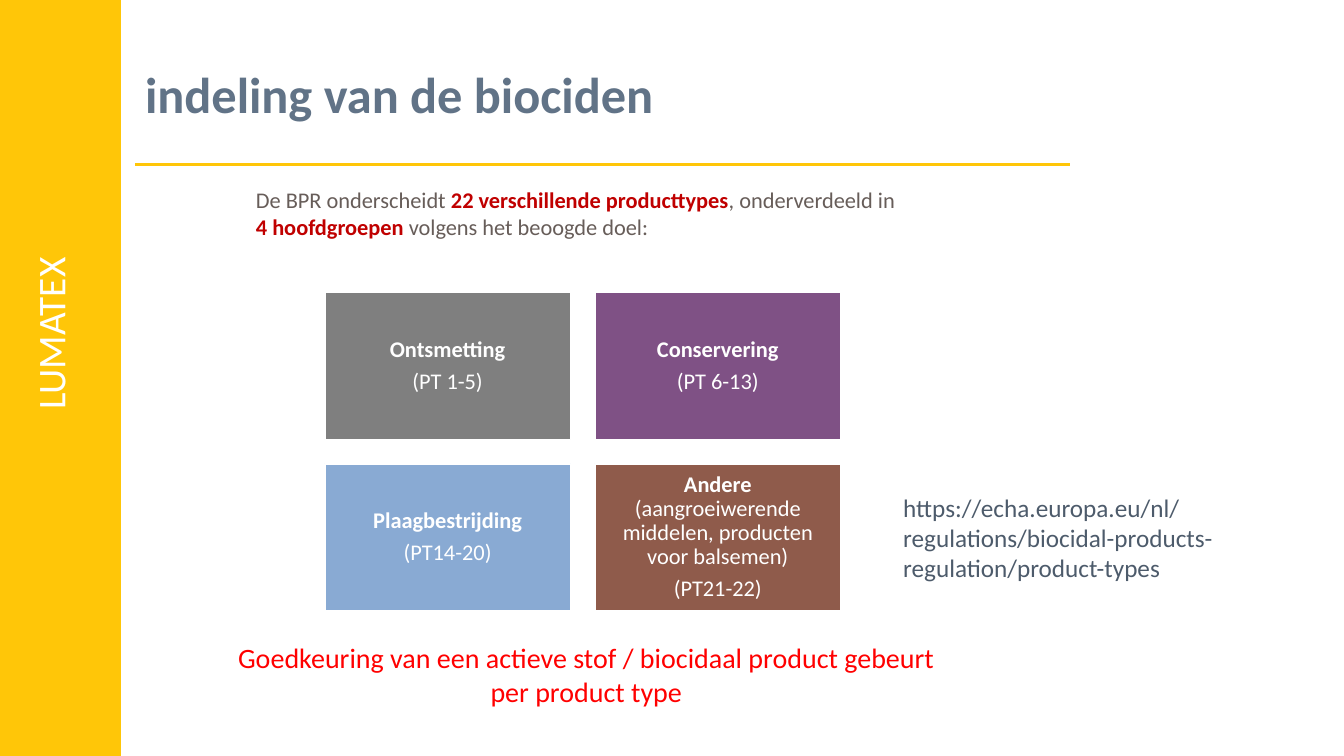
from dataclasses import dataclass

from lxml.etree import SubElement
from pptx import Presentation
from pptx.dml.color import RGBColor
from pptx.enum.shapes import MSO_CONNECTOR, MSO_SHAPE
from pptx.enum.text import MSO_ANCHOR, PP_ALIGN
from pptx.oxml.ns import qn
from pptx.util import Inches, Pt


@dataclass(frozen=True)
class Theme:
    font: str = "Calibri"
    accent: str = "FFC608"
    white: str = "FFFFFF"
    title: str = "617387"
    body: str = "675D59"
    emphasis: str = "C00000"
    conclusion: str = "FF0000"
    source: str = "4D5B6B"
    groups: tuple = ("7F7F7F", "7F5185", "89AAD3", "8F5B4B")
    title_size: int = 36
    band_size: int = 28
    conclusion_size: int = 20
    source_size: int = 18
    body_size: int = 16


THEME = Theme()

PRODUCT_GROUPS = [
    ("Ontsmetting", "", "(PT 1-5)"),
    ("Conservering", "", "(PT 6-13)"),
    ("Plaagbestrijding", "", "(PT14-20)"),
    ("Andere", " (aangroeiwerende middelen, producten voor balsemen)", "(PT21-22)"),
]


def color(value):
    return RGBColor.from_string(value)


def add_runs(paragraph, parts, size):
    for wording, ink, bold in parts:
        run = paragraph.add_run()
        run.text = wording
        run.font.name = THEME.font
        run.font.size = Pt(size)
        run.font.bold = bold
        run.font.color.rgb = color(ink)


def add_text(slide, box, parts, size, align=PP_ALIGN.LEFT, anchor=MSO_ANCHOR.TOP):
    frame = slide.shapes.add_textbox(*map(Inches, box)).text_frame
    frame.word_wrap = True
    frame.vertical_anchor = anchor
    frame.paragraphs[0].alignment = align
    add_runs(frame.paragraphs[0], parts, size)
    return frame


def add_rectangle(slide, box, fill):
    rectangle = slide.shapes.add_shape(MSO_SHAPE.RECTANGLE, *map(Inches, box))
    rectangle.shadow.inherit = False
    rectangle.fill.solid()
    rectangle.fill.fore_color.rgb = color(fill)
    return rectangle


def add_side_band(slide, box):
    left, top, width, height = box
    add_rectangle(slide, box, THEME.accent).line.fill.background()
    name_box = (left + 0.22, top + 2.2, 0.67, 2.22)
    name = add_text(slide, name_box, [("LUMATEX", THEME.white, False)],
                    THEME.band_size, PP_ALIGN.CENTER)
    name._txBody.bodyPr.set("vert", "vert270")


def add_header(slide, box):
    left, top, width, height = box
    add_text(slide, (left, top, width, 1.25),
             [("indeling van de biociden", THEME.title, True)],
             THEME.title_size, anchor=MSO_ANCHOR.MIDDLE)
    bottom = top + height
    rule = slide.shapes.add_connector(
        MSO_CONNECTOR.STRAIGHT,
        *map(Inches, (left, bottom, left + width, bottom)))
    rule.line.color.rgb = color(THEME.accent)
    rule.line.width = Pt(2.25)
    SubElement(rule._element.spPr, qn("a:effectLst"))


def add_product_group(slide, box, group, fill):
    name, detail, product_types = group
    tile = add_rectangle(slide, box, fill)
    tile.line.color.rgb = color(THEME.white)
    tile.line.width = Pt(1.25)
    frame = tile.text_frame
    frame.word_wrap = True
    frame.vertical_anchor = MSO_ANCHOR.MIDDLE
    frame.margin_left = frame.margin_right = Inches(0.07)
    frame.margin_top = frame.margin_bottom = Inches(0.07)
    heading = [(name, THEME.white, True)]
    if detail:
        heading.append((detail, THEME.white, False))
    add_runs(frame.paragraphs[0], heading, THEME.body_size)
    add_runs(frame.add_paragraph(), [(product_types, THEME.white, False)], THEME.body_size)
    for paragraph in frame.paragraphs:
        paragraph.alignment = PP_ALIGN.CENTER
        paragraph.line_spacing = 0.9
        paragraph.space_after = Pt(5.6)


def add_group_grid(slide, box):
    left, top, width, height = box
    tile_width, tile_height = 2.44, 1.46
    for index, (group, fill) in enumerate(zip(PRODUCT_GROUPS, THEME.groups)):
        row, column = divmod(index, 2)
        tile_box = (left + column * (width - tile_width),
                    top + row * (height - tile_height), tile_width, tile_height)
        add_product_group(slide, tile_box, group, fill)


def add_intro(slide, box):
    add_text(slide, box, [
        ("De BPR onderscheidt ", THEME.body, False),
        ("22 verschillende producttypes", THEME.emphasis, True),
        (", onderverdeeld in ", THEME.body, False),
        ("4 hoofdgroepen ", THEME.emphasis, True),
        ("volgens het beoogde doel:", THEME.body, False),
    ], THEME.body_size)


def add_conclusion(slide, box):
    wording = "Goedkeuring van een actieve stof / biocidaal product gebeurt per product type"
    add_text(slide, box, [(wording, THEME.conclusion, False)],
             THEME.conclusion_size, PP_ALIGN.CENTER)


def add_source(slide, box):
    address = "https://echa.europa.eu/nl/regulations/biocidal-products-regulation/product-types"
    add_text(slide, box, [(address, THEME.source, False)], THEME.source_size)


def main():
    presentation = Presentation()
    presentation.slide_width = Inches(13.33)
    presentation.slide_height = Inches(7.5)
    slide = presentation.slides.add_slide(presentation.slide_layouts[6])
    add_side_band(slide, (-0.01, 0, 1.21, 7.5))
    add_header(slide, (1.34, 0.3, 9.27, 1.33))
    add_intro(slide, (2.44, 1.8, 6.6, 0.64))
    add_group_grid(slide, (3.22, 2.9, 5.12, 3.16))
    add_conclusion(slide, (2.24, 6.31, 7.15, 0.77))
    add_source(slide, (8.86, 4.83, 3.92, 1.01))
    presentation.save("out.pptx")


if __name__ == "__main__":
    main()
